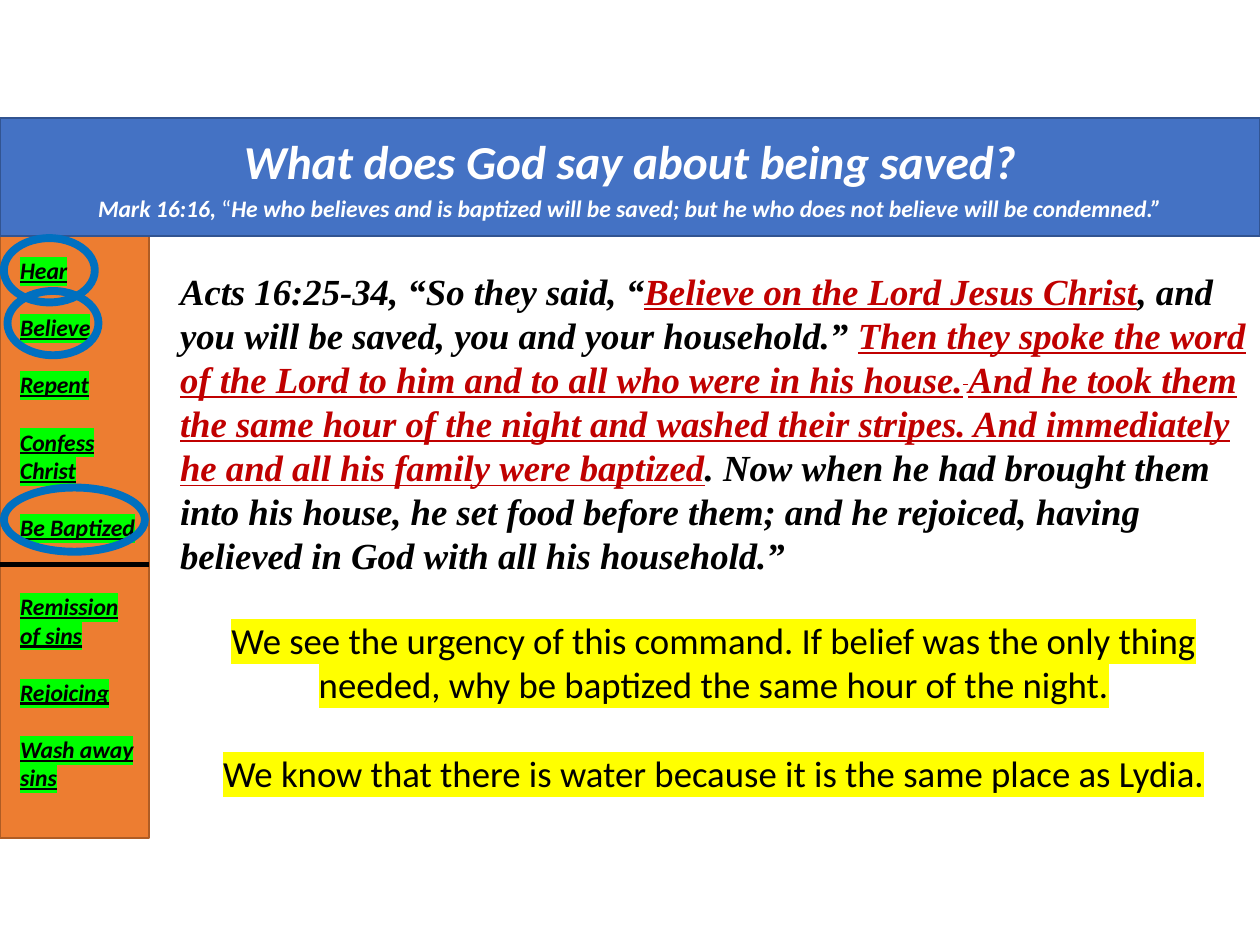
from pptx import Presentation
from pptx.dml.color import RGBColor
from pptx.enum.shapes import MSO_CONNECTOR, MSO_SHAPE
from pptx.enum.text import MSO_ANCHOR, MSO_AUTO_SIZE, PP_ALIGN
from pptx.util import Pt
from lxml.etree import SubElement
from pptx.oxml.ns import qn

# Content: a paragraph is (space before, runs), a run is (text, style)
HEAD = [
    (0, [("What does God say about being saved?", "head")]),
    (2.7, [
        ("Mark 16:16, ", "sub"),
        ("“", "quote"),
        ("He who believes and is baptized will be saved; but he who does "
         "not believe will be condemned.”", "sub"),
    ]),
]
VERSE = [(0, [
    ("Acts 16:25-34, “So they said, “", "verse"),
    ("Believe on the Lord Jesus Christ", "key"),
    (", and you will be saved, you and your household.” ", "verse"),
    ("Then they spoke the word of the Lord to him and to all who were in "
     "his house.", "key"),
    (" ", "raised"),
    ("And he took them the same hour of the night and washed their stripes. "
     "And immediately he and all his family were baptized", "key"),
    (". Now when he had brought them into his house, he set food before "
     "them; and he rejoiced, having believed in God with all his "
     "household.”", "verse"),
])]
GAP = 16.5
STEPS = [("Hear", 0), ("Believe", GAP), ("Repent", GAP), ("Confess", GAP),
         ("Christ", 0), ("Be Baptized", GAP)]
GIFTS = [("Remission of sins", 0), ("Rejoicing", GAP),
         ("Wash away sins", GAP)]
NOTES = [
    (0, [("We see the urgency of this command. If belief was the only thing "
          "needed, why be baptized the same hour of the night.", "note")]),
    (25.6, [("We know that there is water because it is the same place as "
             "Lydia.", "note")]),
]

# Theme: colours and type styles
SANS, SERIF = "Calibri", "Times New Roman"
THEME = {
    "blue": "4472C4", "navy": "325491", "orange": "ED7D31",
    "rust": "AF5C24", "ring": "0070C0", "black": "000000",
    "white": "FFFFFF", "red": "C00000", "green": "00FF00",
    "yellow": "FFFF00",
    # font, size, colour, bold and italic, underline, highlight, baseline
    "head": (SANS, 27, "white", True, False, None, 0),
    "sub": (SANS, 13.5, "white", True, False, None, 0),
    "quote": (SANS, 13.5, "white", False, False, None, 0),
    "verse": (SERIF, 21, "black", True, False, None, 0),
    "key": (SERIF, 21, "red", True, True, None, 0),
    "raised": (SERIF, 21, "red", True, True, None, 30),
    "step": (SANS, 13.5, "black", True, True, "green", 0),
    "note": (SANS, 21, "black", False, False, "yellow", 0),
}

# Layout
WIDE, HIGH = 720, 540
TOP, BAND = 67.5, 67.5
SIDE = 85
BASE = TOP + BAND
INSET = 4.3
RINGS = [(INSET, 166.3, 52), (2.2, 136.1, 52), (2.2, 278.6, 80.6)]


def tint(name):
    return RGBColor.from_string(THEME[name])


def place(shape, left, top, width, height):
    shape.left, shape.top = Pt(left), Pt(top)
    shape.width, shape.height = Pt(width), Pt(height)


def paint(shape, fill, line, size):
    if fill:
        shape.fill.solid()
        shape.fill.fore_color.rgb = tint(fill)
    else:
        shape.fill.background()
    shape.line.color.rgb = tint(line)
    shape.line.width = Pt(size)


def add_run(para, text, style):
    face, size, color, strong, under, mark, base = THEME[style]
    run = para.add_run()
    run.text = text
    font = run.font
    font.size, font.bold, font.italic = Pt(size), strong, strong and style != "note"
    font.underline = under
    font.color.rgb = tint(color)
    props = run._r.get_or_add_rPr()
    if mark:
        light = SubElement(props, qn("a:highlight"))
        SubElement(light, qn("a:srgbClr")).set("val", THEME[mark])
    if base:
        props.set("baseline", str(base * 1000))
    font.name = face


def write(shape, paras, align=PP_ALIGN.LEFT, anchor=MSO_ANCHOR.TOP):
    frame = shape.text_frame
    frame.word_wrap = True
    frame.auto_size = MSO_AUTO_SIZE.NONE
    frame.vertical_anchor = anchor
    for i, (gap, runs) in enumerate(paras):
        para = frame.paragraphs[0] if i == 0 else frame.add_paragraph()
        para.alignment = align
        para.space_before = Pt(gap)
        props = para._p.get_or_add_pPr()
        props.set("marL", "0")
        props.set("indent", "0")
        SubElement(props, qn("a:buNone"))
        for text, style in runs:
            add_run(para, text, style)


deck = Presentation()
deck.slide_width, deck.slide_height = Pt(WIDE), Pt(HIGH)
slide = deck.slides.add_slide(deck.slide_layouts[3])
shapes = slide.shapes
title, steps, gifts = list(slide.placeholders)[:3]

# Sidebar panel, set behind the lists
panel = shapes.add_shape(MSO_SHAPE.RECTANGLE, 0, Pt(BASE), Pt(SIDE), Pt(344))
panel.shadow.inherit = False
paint(panel, "orange", "rust", 1)
title.element.addprevious(panel.element)

# Banner
place(title, 0, TOP, WIDE, BAND)
paint(title, "blue", "navy", 1)
write(title, HEAD, PP_ALIGN.CENTER, MSO_ANCHOR.MIDDLE)

# Sidebar lists
for shape, items, top, height in ((steps, STEPS, 142.6, 170.6),
                                  (gifts, GIFTS, 334.8, 121.7)):
    place(shape, INSET, top, SIDE - INSET, height)
    write(shape, [(gap, [(text, "step")]) for text, gap in items])

# Divider
rule = shapes.add_connector(MSO_CONNECTOR.STRAIGHT, 0, Pt(322.6),
                            Pt(SIDE), Pt(322.6))
rule.line.color.rgb = tint("black")
rule.line.width = Pt(3)
SubElement(rule.element.spPr, qn("a:effectLst"))

# Verse and notes
for paras, box, align in (
        (VERSE, (95.8, 149.8, 624.2, 211), PP_ALIGN.LEFT),
        (NOTES, (105.1, 349.2, 605.5, 108.7), PP_ALIGN.CENTER)):
    write(shapes.add_textbox(*map(Pt, box)), paras, align)

# Rings around the steps named in the verse
for left, top, width in RINGS:
    ring = shapes.add_shape(MSO_SHAPE.OVAL, Pt(left), Pt(top),
                            Pt(width), Pt(36.7))
    ring.shadow.inherit = False
    paint(ring, None, "ring", 4.5)

deck.save("out.pptx")
